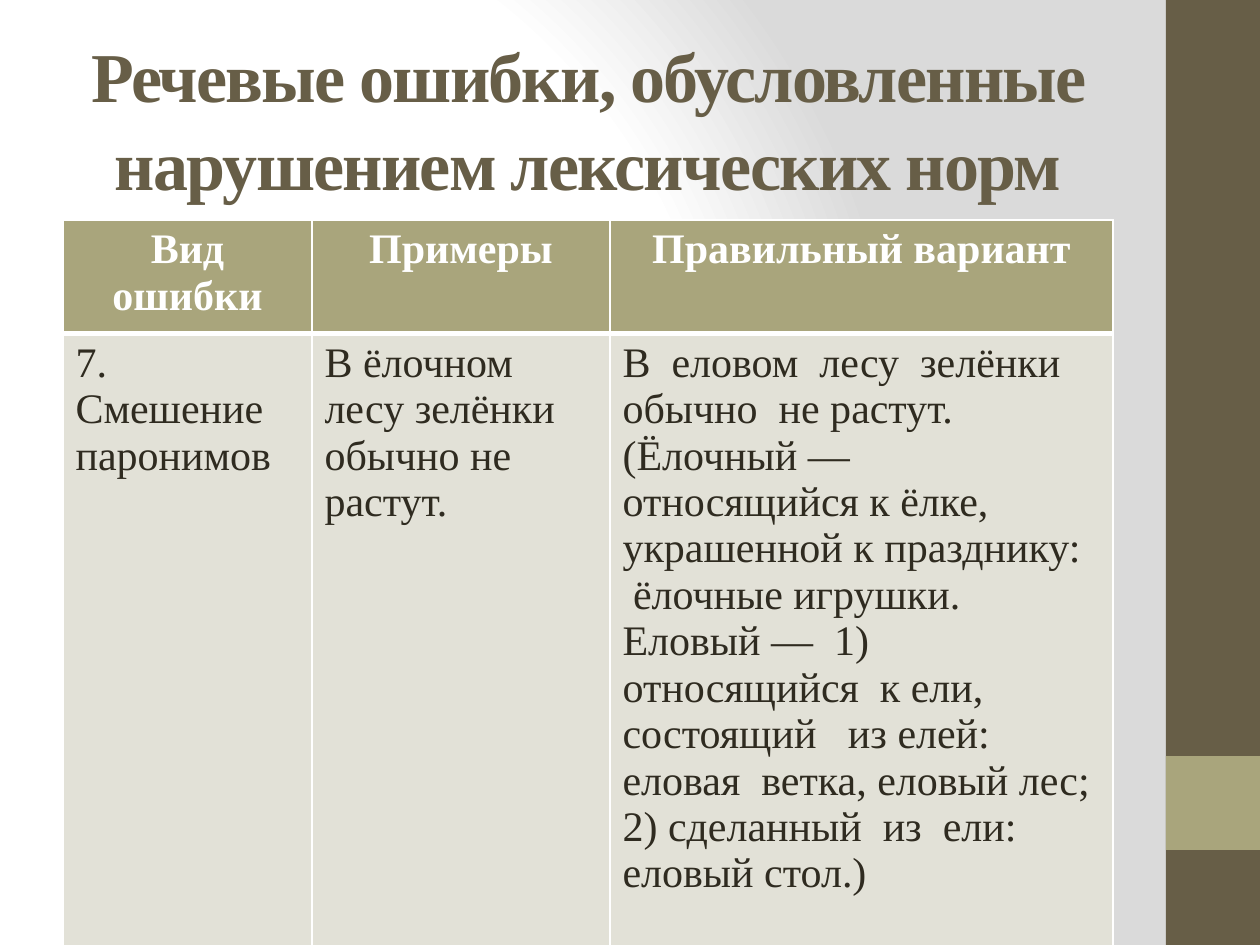
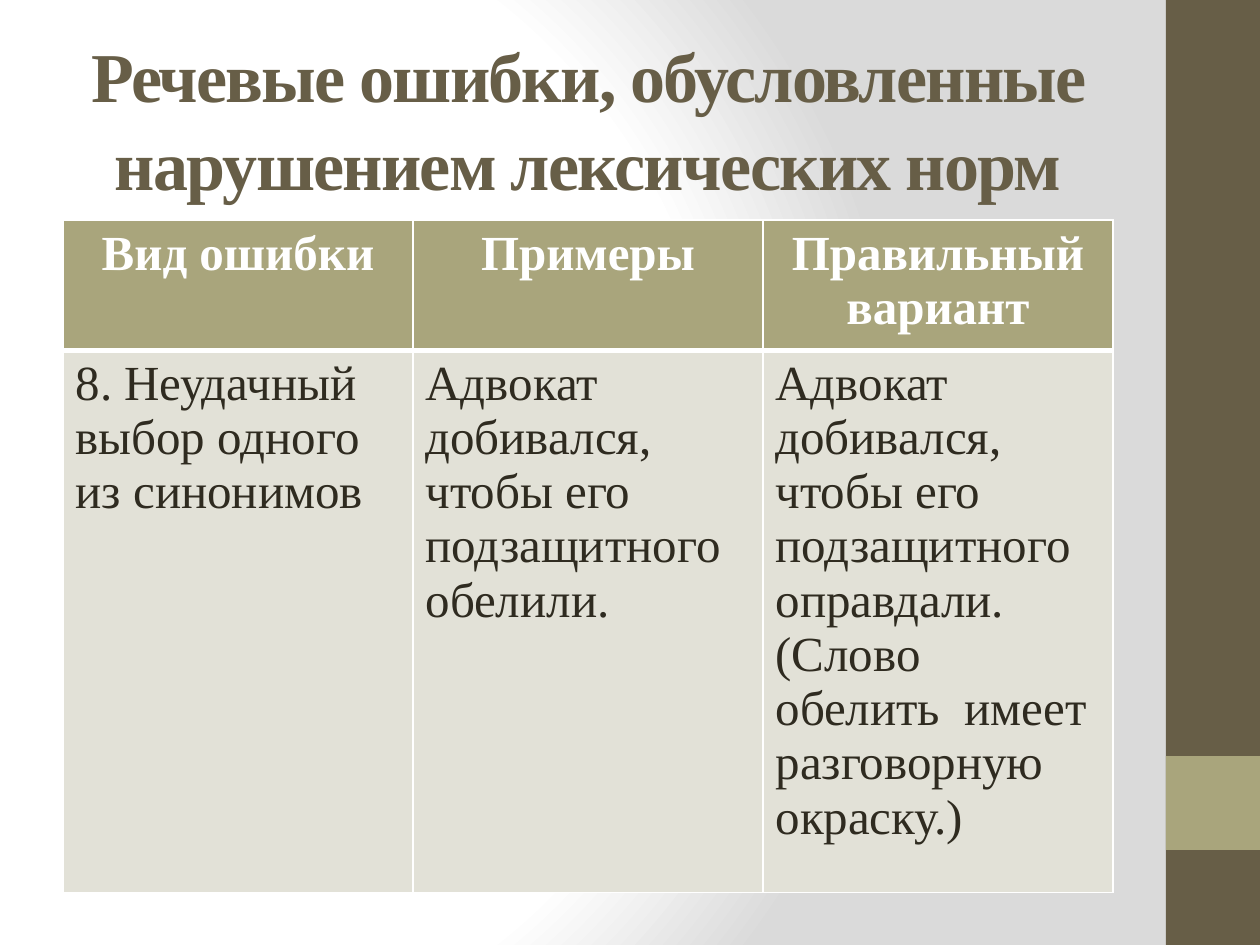
from pptx import Presentation
from pptx.dml.color import RGBColor
from pptx.enum.shapes import MSO_SHAPE
from pptx.enum.text import MSO_ANCHOR, PP_ALIGN
from pptx.oxml import parse_xml
from pptx.oxml.ns import nsdecls, qn
from pptx.util import Pt

PX = 914400 // 126
TITLE = "Речевые ошибки, обусловленные нарушением лексических норм"
HEADERS = ["Вид ошибки", "Примеры", "Правильный вариант"]
TABLES = [
    dict(size=24, widths=[249, 298, 503], heights=[105, 571], body=[
        "7. Смешение паронимов",
        "В ёлочном лесу зелёнки обычно не растут.",
        "В  еловом  лесу  зелёнки  обычно  не растут. (Ёлочный —   относящийся к ёлке, "
        "украшенной к празднику:   ёлочные игрушки. Еловый —  1)  относящийся  к ели, "
        "состоящий   из елей: еловая  ветка, еловый лес; 2) сделанный  из  ели: еловый стол.)",
    ]),
    dict(size=28, widths=[350] * 3, heights=[121, 501], body=[
        "8. Неудачный выбор одного из синонимов",
        "Адвокат добивался, чтобы его подзащитного обелили.",
        "Адвокат добивался, чтобы его подзащитного оправдали. "
        "(Слово  обелить  имеет разговорную окраску.)",
    ]),
]


def color(value):
    return RGBColor.from_string(value)


class Deck:
    FONT = "Times New Roman"
    BROWN, OLIVE, PALE, INK, WHITE, GREY = (
        "675E47", "A9A57C", "E2E1D7", "2F2B20", "FFFFFF", "DADADA")

    def __init__(self):
        self.prs = Presentation()
        self.prs.slide_width = 1260 * PX
        self.prs.slide_height = 945 * PX
        self.s = None

    def slide(self):
        self.s = self.prs.slides.add_slide(self.prs.slide_layouts[6])
        self.background()
        self.rect(1166, 0, 94, 945, self.BROWN)
        self.rect(1166, 756, 94, 94, self.OLIVE)

    def background(self):
        self.s.background.fill.solid()
        stops = "".join(
            f'<a:gs pos="{pos}000"><a:srgbClr val="{value}"/></a:gs>'
            for pos, value in [(0, self.WHITE), (75, self.WHITE), (100, self.GREY)])
        gradient = parse_xml(
            f'<a:gradFill {nsdecls("a")} rotWithShape="1"><a:gsLst>{stops}</a:gsLst>'
            '<a:path path="circle"><a:fillToRect l="20000" t="50000" r="100000" b="50000"/>'
            '</a:path></a:gradFill>')
        props = self.s._element.find(".//" + qn("p:bgPr"))
        props.replace(props.find(qn("a:solidFill")), gradient)

    def rect(self, x, y, w, h, fill):
        sp = self.s.shapes.add_shape(MSO_SHAPE.RECTANGLE, x * PX, y * PX, w * PX, h * PX)
        sp.shadow.inherit = False
        sp.fill.solid()
        sp.fill.fore_color.rgb = color(fill)
        sp.line.fill.background()

    def label(self, p, text, size, fill, bold, align):
        r = p.add_run()
        r.text = text
        p.alignment = align
        p.font.name = self.FONT
        p.font.size = Pt(size)
        p.font.bold = bold
        p.font.color.rgb = color(fill)
        return r

    def title(self, text):
        sp = self.s.shapes.add_textbox(63 * PX, 38 * PX, 1050 * PX, 157 * PX)
        tf = sp.text_frame
        tf.word_wrap = True
        tf.vertical_anchor = MSO_ANCHOR.MIDDLE
        p = tf.paragraphs[0]
        p.line_spacing = 1.05
        r = self.label(p, text, 40, self.BROWN, True, PP_ALIGN.CENTER)
        r._r.get_or_add_rPr().set("spc", "-100")

    def borders(self, cell, **widths):
        props = cell._tc.get_or_add_tcPr()
        for side, width in widths.items():
            props.append(parse_xml(
                f'<a:ln{side} {nsdecls("a")} w="{Pt(width)}"><a:solidFill>'
                f'<a:srgbClr val="{self.WHITE}"/></a:solidFill></a:ln{side}>'))

    def table(self, body, size, widths, heights):
        table = self.s.shapes.add_table(
            2, len(widths), 63 * PX, 220 * PX, sum(widths) * PX, sum(heights) * PX).table
        for column, width in zip(table.columns, widths):
            column.width = width * PX
        for i, texts in enumerate([HEADERS, body]):
            table.rows[i].height = heights[i] * PX
            head = i == 0
            for j, text in enumerate(texts):
                cell = table.cell(i, j)
                self.borders(cell, L=1, R=1, T=1 if head else 3, B=3 if head else 1)
                cell.fill.solid()
                cell.fill.fore_color.rgb = color(self.OLIVE if head else self.PALE)
                self.label(cell.text_frame.paragraphs[0], text, size,
                           self.WHITE if head else self.INK, head,
                           PP_ALIGN.CENTER if head else PP_ALIGN.LEFT)


def main():
    deck = Deck()
    for content in TABLES:
        deck.slide()
        deck.title(TITLE)
        deck.table(**content)
    deck.prs.save("out.pptx")


if __name__ == "__main__":
    main()
